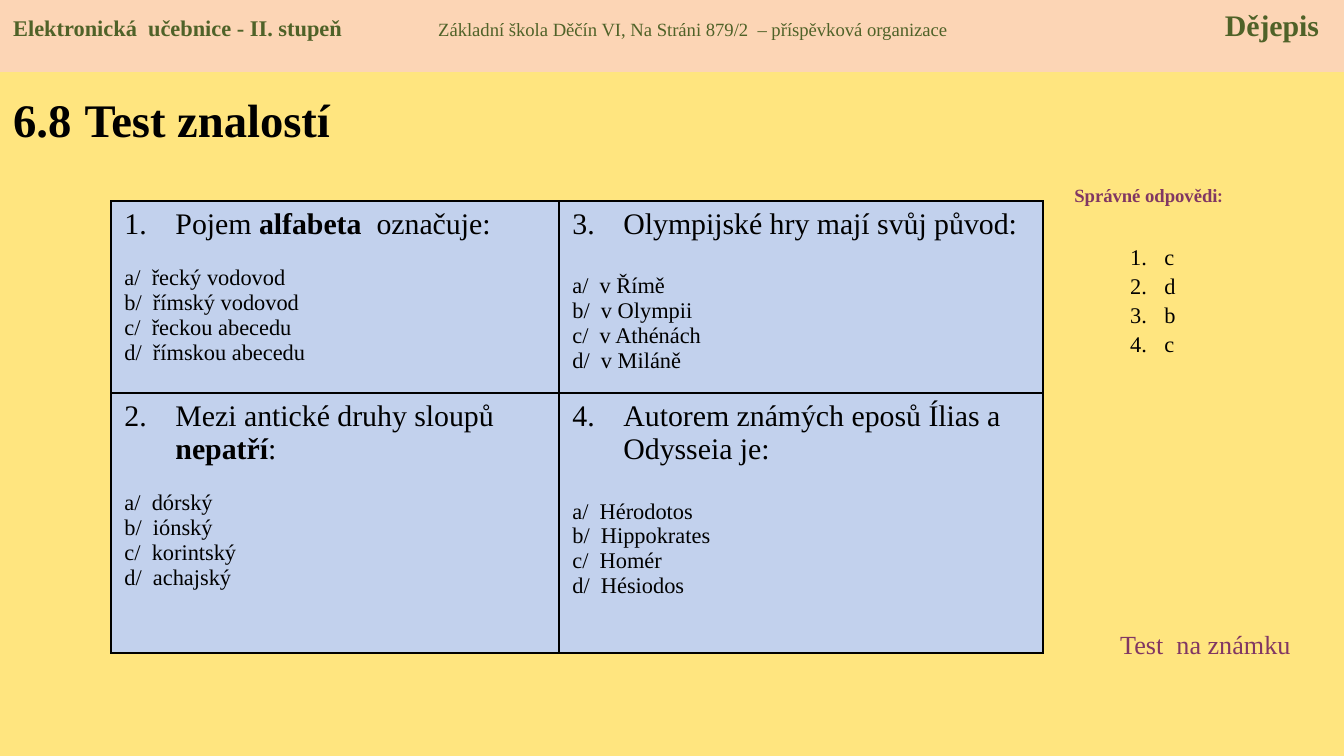
from dataclasses import dataclass

from lxml import etree
from pptx import Presentation
from pptx.dml.color import RGBColor
from pptx.enum.shapes import MSO_SHAPE
from pptx.enum.text import MSO_ANCHOR, PP_ALIGN
from pptx.oxml.ns import qn
from pptx.util import Emu, Pt

RECTANGLE = MSO_SHAPE.RECTANGLE
LEFT, CENTER = PP_ALIGN.LEFT, PP_ALIGN.CENTER
TOP, MIDDLE = MSO_ANCHOR.TOP, MSO_ANCHOR.MIDDLE

PX_PER_INCH = 134.4
SLIDE_WIDTH, SLIDE_HEIGHT = 1344, 756


@dataclass(frozen=True)
class Theme:
    font: str = "Times New Roman"
    second_font: str = "Calibri"
    background: str = "FFE57F"
    band: str = "FCD5B5"
    cell: str = "C2D1ED"
    ink: str = "000000"
    green: str = "4F6228"
    purple: str = "813763"
    title: int = 25
    title_gap: int = 28
    question: int = 16
    label: int = 14
    body: int = 12
    small: int = 10


THEME = Theme()


def px(length):
    return Emu(round(length * 914400 / PX_PER_INCH))


def write(paragraph, text, size=THEME.body, color=THEME.ink, bold=False, font=THEME.font):
    run = paragraph.add_run()
    run.text = text
    run.font.size = Pt(size)
    run.font.name = font
    run.font.bold = bold
    run.font.color.rgb = RGBColor.from_string(color)


def number(paragraph, indent, start=1):
    """Give a paragraph an automatic number with a hanging indent."""
    properties = paragraph._p.get_or_add_pPr()
    properties.set("marL", str(px(indent)))
    properties.set("indent", str(-px(indent)))
    numbering = etree.SubElement(properties, qn("a:buAutoNum"), type="arabicPeriod")
    if start > 1:
        numbering.set("startAt", str(start))


def add_tabs(paragraph, stops):
    tabs = etree.SubElement(paragraph._p.get_or_add_pPr(), qn("a:tabLst"))
    for position, side in stops:
        etree.SubElement(tabs, qn("a:tab"), pos=str(px(position)), algn=side)


def add_borders(cell, color, width=1):
    properties = cell._tc.get_or_add_tcPr()
    for index, side in enumerate(("lnL", "lnR", "lnT", "lnB")):
        line = etree.Element(qn(f"a:{side}"), w=str(Pt(width)))
        fill = etree.SubElement(line, qn("a:solidFill"))
        etree.SubElement(fill, qn("a:srgbClr"), val=color)
        properties.insert(index, line)


class SlideBuilder:
    def __init__(self, slide, theme):
        self.slide = slide
        self.theme = theme
        fill = slide.background.fill
        fill.solid()
        fill.fore_color.rgb = RGBColor.from_string(theme.background)

    def band(self, left, top, width, height):
        shape = self.slide.shapes.add_shape(RECTANGLE, *map(px, (left, top, width, height)))
        shape.shadow.inherit = False
        shape.fill.solid()
        shape.fill.fore_color.rgb = RGBColor.from_string(self.theme.band)
        shape.line.fill.background()
        frame = shape.text_frame
        frame.vertical_anchor = TOP
        frame.paragraphs[0].alignment = LEFT
        return frame.paragraphs[0]

    def text_box(self, left, top, width, height, anchor=TOP, align=LEFT):
        box = self.slide.shapes.add_textbox(*map(px, (left, top, width, height)))
        frame = box.text_frame
        frame.word_wrap = True
        frame.vertical_anchor = anchor
        frame.paragraphs[0].alignment = align
        return frame

    def numbered_list(self, left, top, width, height, items, margin_top, indent):
        frame = self.text_box(left, top, width, height)
        frame.margin_top = px(margin_top)
        for index, item in enumerate(items):
            paragraph = frame.add_paragraph() if index else frame.paragraphs[0]
            paragraph.space_after = Pt(1.1)
            number(paragraph, indent)
            write(paragraph, item)

    def question_table(self, left, top, widths, heights, questions):
        size = px(sum(widths)), px(sum(heights))
        table = self.slide.shapes.add_table(
            len(heights), len(widths), px(left), px(top), *size).table
        table.first_row = table.horz_banding = False
        for column, width in zip(table.columns, widths):
            column.width = px(width)
        for row, height in zip(table.rows, heights):
            row.height = px(height)
        # Questions run down each column in turn
        for index, question in enumerate(questions):
            column, row = divmod(index, len(heights))
            self.question(table.cell(row, column), index + 1, *question)

    def question(self, cell, position, runs, gap, options):
        cell.fill.solid()
        cell.fill.fore_color.rgb = RGBColor.from_string(self.theme.cell)
        add_borders(cell, self.theme.ink)
        heading = cell.text_frame.paragraphs[0]
        heading.space_after = Pt(gap)
        number(heading, 51, position)
        for text, bold in runs:
            write(heading, text, size=self.theme.question, bold=bold)
        for letter, option in zip("abcd", options):
            write(cell.text_frame.add_paragraph(), f"{letter}/  {option}")


QUESTIONS = [
    ([("Pojem ", False), ("alfabeta ", True), (" označuje:", False)], 13.3,
     ["řecký vodovod", "římský vodovod", "řeckou abecedu", "římskou abecedu"]),
    ([("Mezi antické druhy sloupů ", False), ("nepatří", True), (":", False)], 13.3,
     ["dórský", "iónský", "korintský", "achajský"]),
    ([("Olympijské hry mají svůj původ:", False)], 17.7,
     ["v Římě", "v Olympii", "v Athénách", "v Miláně"]),
    ([("Autorem známých eposů Ílias a Odysseia je:", False)], 17.7,
     ["Hérodotos", "Hippokrates", "Homér", "Hésiodos"]),
]


def main():
    presentation = Presentation()
    presentation.slide_width = px(SLIDE_WIDTH)
    presentation.slide_height = px(SLIDE_HEIGHT)
    slide = presentation.slides.add_slide(presentation.slide_layouts[6])
    builder = SlideBuilder(slide, THEME)

    # Title
    title = builder.text_box(0, 73, 429, 87, anchor=MIDDLE).paragraphs[0]
    write(title, "6.8", size=THEME.title, bold=True)
    write(title, " ", size=THEME.title_gap, bold=True)
    write(title, "Test znalostí", size=THEME.title, bold=True)

    # Correct answers
    caption = builder.text_box(1043, 177, 211, 36, align=CENTER).paragraphs[0]
    write(caption, "Správné odpovědi", size=THEME.small, color=THEME.purple, bold=True)
    write(caption, ":", size=THEME.small, color=THEME.purple, bold=True,
          font=THEME.second_font)
    builder.numbered_list(1117, 208, 74, 176, "cdbc", margin_top=35, indent=34)

    # Questions
    builder.question_table(111, 201, (448, 484), (192, 260), QUESTIONS)

    # Graded test label
    label = builder.text_box(1107, 622, 211, 46).paragraphs[0]
    write(label, "Test  na známku", size=THEME.label, color=THEME.purple)

    # Header band
    header = builder.band(0, 0, SLIDE_WIDTH, 72)
    add_tabs(header, [(425, "l"), (1306, "r")])
    write(header, "Elektronická  učebnice - II. stupeň\t", color=THEME.green, bold=True)
    write(header, "Základní škola Děčín VI, Na Stráni 879/2  – příspěvková organizace\t",
          size=THEME.small, color=THEME.green)
    write(header, "Dějepis", size=THEME.question, color=THEME.green, bold=True)

    presentation.save("out.pptx")


if __name__ == "__main__":
    main()
